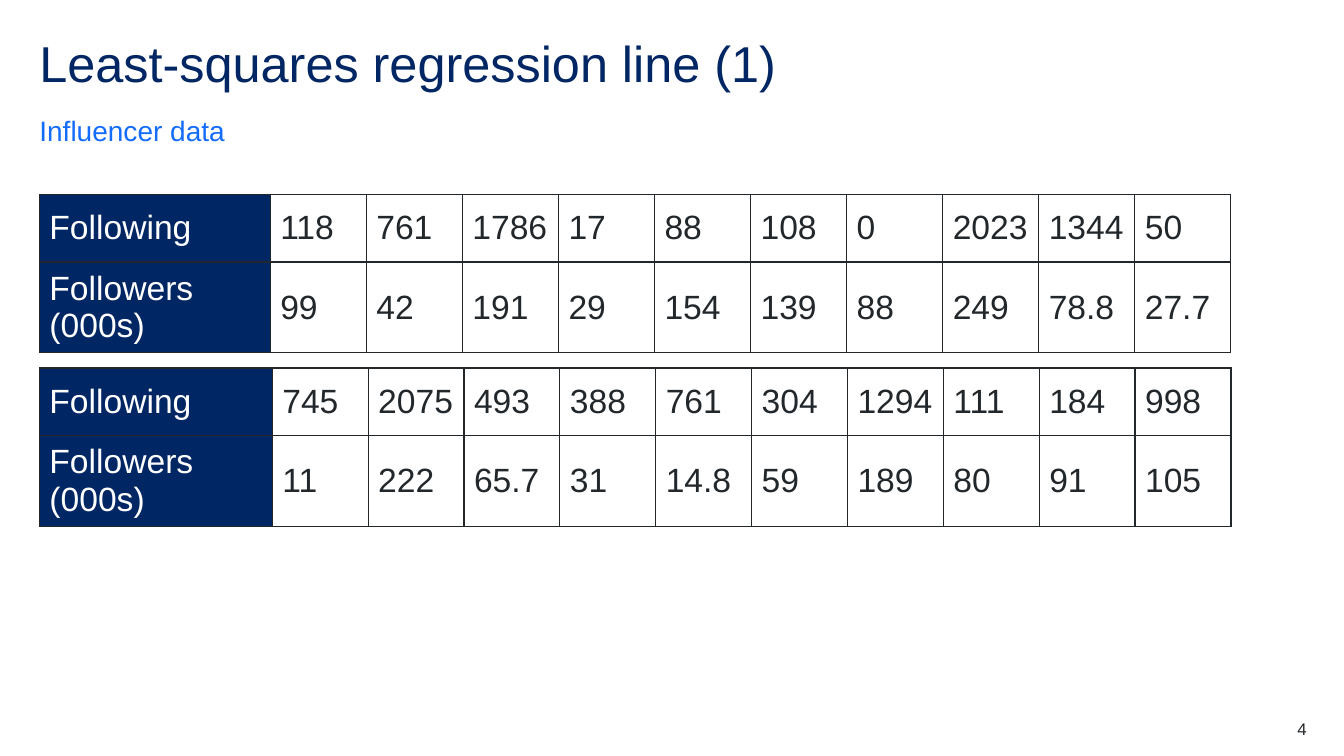
from dataclasses import dataclass

from lxml.etree import SubElement
from pptx import Presentation
from pptx.dml.color import RGBColor
from pptx.enum.text import MSO_ANCHOR as Anchor, PP_ALIGN as Align
from pptx.oxml.ns import qn
from pptx.slide import Slide
from pptx.table import _Cell as Cell
from pptx.text.text import _Paragraph as Paragraph
from pptx.util import Inches, Pt

NAVY = RGBColor(0x00, 0x26, 0x64)
BLUE = RGBColor(0x14, 0x6C, 0xFD)
INK = RGBColor(0x22, 0x27, 0x2B)
WHITE = RGBColor(0xFF, 0xFF, 0xFF)

FONT = "Arial"
SLIDE_WIDTH, SLIDE_HEIGHT = Inches(13.33), Inches(7.5)

# Shares of the slide, in percent
MARGIN = 2.93
CONTENT_WIDTH = 94.22
TABLE_WIDTH = 88.67
ROW_HEIGHT = 8.93


@dataclass(frozen=True)
class Label:
    text: str
    left: float
    top: float
    width: float
    height: float
    size: float
    color: RGBColor
    anchor: Anchor = Anchor.TOP
    align: Align = Align.LEFT
    line_spacing: float = 1.0
    space_after: float = 0


@dataclass(frozen=True)
class InfluencerTable:
    top: float
    label_width: float
    following: str
    followers: str


LABELS = [
    Label("Least-squares regression line (1)", MARGIN, 5.2, CONTENT_WIDTH, 8,
          36, NAVY, line_spacing=0.9),
    Label("Influencer data", MARGIN, 14.27, CONTENT_WIDTH, 5.2, 20, BLUE,
          anchor=Anchor.BOTTOM, line_spacing=1.5, space_after=12),
    Label("4", 91.3, 95.07, 5.93, 2.67, 12, INK, align=Align.RIGHT),
]

TABLES = [
    InfluencerTable(25.73, 17.18,
                    "118 761 1786 17 88 108 0 2023 1344 50",
                    "99 42 191 29 154 139 88 249 78.8 27.7"),
    InfluencerTable(48.67, 17.33,
                    "745 2075 493 388 761 304 1294 111 184 998",
                    "11 222 65.7 31 14.8 59 189 80 91 105"),
]


def across(percent: float) -> int:
    return round(SLIDE_WIDTH * percent / 100)


def down(percent: float) -> int:
    return round(SLIDE_HEIGHT * percent / 100)


def add_run(paragraph: Paragraph, text: str, size: float, color: RGBColor) -> None:
    run = paragraph.add_run()
    run.text = text
    run.font.name = FONT
    run.font.size = Pt(size)
    run.font.color.rgb = color


def add_label(slide: Slide, label: Label) -> None:
    shape = slide.shapes.add_textbox(across(label.left), down(label.top),
                                     across(label.width), down(label.height))
    frame = shape.text_frame
    frame.word_wrap = True
    frame.vertical_anchor = label.anchor
    frame.margin_left = frame.margin_right = 0
    frame.margin_top = frame.margin_bottom = 0
    paragraph = frame.paragraphs[0]
    paragraph.alignment = label.align
    paragraph.line_spacing = label.line_spacing
    paragraph.space_after = Pt(label.space_after)
    add_run(paragraph, label.text, label.size, label.color)


def add_borders(cell: Cell) -> None:
    properties = cell._tc.get_or_add_tcPr()
    for side in ("a:lnL", "a:lnR", "a:lnT", "a:lnB"):
        line = SubElement(properties, qn(side), w=str(Pt(1)))
        fill = SubElement(line, qn("a:solidFill"))
        SubElement(fill, qn("a:srgbClr"), val=str(INK))


def fill_cell(cell: Cell, text: str, is_label: bool) -> None:
    cell.vertical_anchor = Anchor.MIDDLE
    add_borders(cell)
    if is_label:
        cell.fill.solid()
        cell.fill.fore_color.rgb = NAVY
    else:
        cell.fill.background()
    add_run(cell.text_frame.paragraphs[0], text, 24, WHITE if is_label else INK)


def add_influencer_table(slide: Slide, data: InfluencerTable) -> None:
    rows = [["Following", *data.following.split()],
            ["Followers (000s)", *data.followers.split()]]
    value_count = len(rows[0]) - 1
    table = slide.shapes.add_table(
        len(rows), value_count + 1, across(MARGIN), down(data.top),
        across(TABLE_WIDTH), down(ROW_HEIGHT * len(rows))).table
    table.first_row = table.horz_banding = False

    # Label column first, the rest shared equally by the values
    value_width = (TABLE_WIDTH - data.label_width) / value_count
    for index, column in enumerate(table.columns):
        column.width = across(value_width if index else data.label_width)

    for row_index, row in enumerate(rows):
        table.rows[row_index].height = down(ROW_HEIGHT)
        for column_index, text in enumerate(row):
            fill_cell(table.cell(row_index, column_index), text, column_index == 0)


def main() -> None:
    presentation = Presentation()
    presentation.slide_width, presentation.slide_height = SLIDE_WIDTH, SLIDE_HEIGHT
    slide = presentation.slides.add_slide(presentation.slide_layouts[6])

    # Title, subtitle and page number
    for label in LABELS:
        add_label(slide, label)

    # Influencer data
    for data in TABLES:
        add_influencer_table(slide, data)

    presentation.save("out.pptx")


if __name__ == "__main__":
    main()
